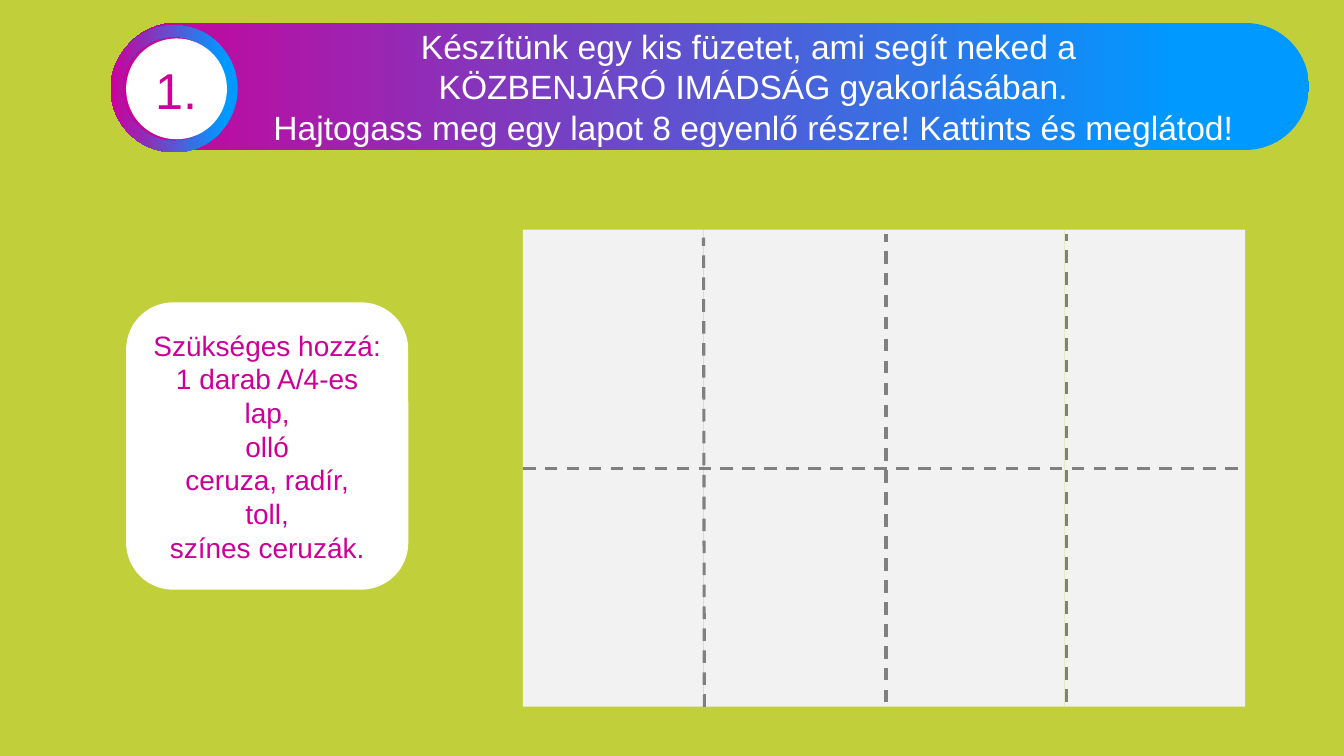
import pptx
import pptx.util
import pptx.dml.color
import pptx.enum.dml
import pptx.enum.shapes
import pptx.enum.text
import pptx.oxml

Cm = pptx.util.Cm
Pt = pptx.util.Pt
SHAPES = pptx.enum.shapes.MSO_SHAPE

COLORS = {
    "background": "C0CF3A",
    "blue": "0099FF",
    "magenta": "CC0099",
    "white": "FFFFFF",
    "paper": "F2F2F2",
    "fold": "808080",
}
FONT = "Arial"

STEP_NUMBER = ["1. "]
TITLE_LINES = [
    "Készítünk egy kis füzetet, ami segít neked a ",
    "KÖZBENJÁRÓ IMÁDSÁG gyakorlásában.",
    "Hajtogass meg egy lapot 8 egyenlő részre! Kattints és meglátod!",
]
SUPPLIES = [
    "Szükséges hozzá:",
    "1 darab A/4-es lap,",
    "olló",
    "ceruza, radír,",
    "toll,",
    "színes ceruzák.",
]

# Lengths in centimetres: left, top, width, height
BANNER = (2.84, 0.58, 30.15, 3.2)
RING = (2.79, 0.64, 3.2, 3.2)
NUMBER_DISC = (3.18, 0.97, 2.54, 2.54)
SUPPLIES_PANEL = (3.18, 7.62, 7.11, 7.24)

PAPER_LEFT, PAPER_TOP = 13.18, 5.79
CELL_WIDTH, CELL_HEIGHT = 4.55, 6.01
COLUMNS, ROWS = 4, 2
# Vertical folds: bottom x, bottom y, top x, top y
VERTICAL_FOLDS = [
    (17.75, 17.81, 17.73, 5.99),
    (22.33, 17.7, 22.33, 5.89),
    (26.87, 17.68, 26.87, 5.89),
]


def rgb(name):
    return pptx.dml.color.RGBColor.from_string(COLORS[name])


def add_shape(slide, preset, box, color=None, adjustment=None):
    """Add an outline-free shape; without a colour it gets the blue-magenta gradient."""
    shape = slide.shapes.add_shape(preset, *map(Cm, box))
    shape.shadow.inherit = False
    shape.line.fill.background()
    if adjustment is not None:
        shape.adjustments[0] = adjustment
    if color:
        shape.fill.solid()
        shape.fill.fore_color.rgb = rgb(color)
    else:
        shape.fill.gradient()
        shape.fill.gradient_angle = 180
        stops = shape.fill.gradient_stops
        for stop, position, name in zip(stops, (0.11, 1), ("blue", "magenta")):
            stop.position = position
            stop.color.rgb = rgb(name)
    return shape


def write_lines(shape, lines, size, color):
    frame = shape.text_frame
    frame.word_wrap = True
    frame.vertical_anchor = pptx.enum.text.MSO_ANCHOR.MIDDLE
    for index, line in enumerate(lines):
        paragraph = frame.add_paragraph() if index else frame.paragraphs[0]
        paragraph.alignment = pptx.enum.text.PP_ALIGN.CENTER
        run = paragraph.add_run()
        run.text = line
        run.font.size = Pt(size)
        run.font.name = FONT
        run.font.color.rgb = rgb(color)


def add_fold(slide, ends):
    fold = slide.shapes.add_connector(
        pptx.enum.shapes.MSO_CONNECTOR.STRAIGHT, *map(Cm, ends))
    fold.line.color.rgb = rgb("fold")
    fold.line.width = Pt(2.25)
    fold.line.dash_style = pptx.enum.dml.MSO_LINE.DASH
    properties = fold._element.spPr
    properties.append(pptx.oxml.parse_xml(
        '<a:effectLst xmlns:a="http://schemas.openxmlformats.org/drawingml/2006/main"/>'))


def add_header(slide):
    banner = add_shape(slide, SHAPES.ROUNDED_RECTANGLE, BANNER, adjustment=0.5)
    banner.text_frame.margin_left = Cm(2.39)
    write_lines(banner, TITLE_LINES, 24, "white")
    add_shape(slide, SHAPES.DONUT, RING, adjustment=0.089)
    disc = add_shape(slide, SHAPES.OVAL, NUMBER_DISC, "white")
    write_lines(disc, STEP_NUMBER, 36, "magenta")


def add_folded_paper(slide):
    for row in range(ROWS):
        for column in range(COLUMNS):
            cell = (PAPER_LEFT + column * CELL_WIDTH,
                    PAPER_TOP + row * CELL_HEIGHT, CELL_WIDTH, CELL_HEIGHT)
            add_shape(slide, SHAPES.RECTANGLE, cell, "paper")
    middle = PAPER_TOP + CELL_HEIGHT
    right = PAPER_LEFT + COLUMNS * CELL_WIDTH
    for ends in [(PAPER_LEFT, middle, right, middle), *VERTICAL_FOLDS]:
        add_fold(slide, ends)


def main():
    presentation = pptx.Presentation()
    presentation.slide_width = Cm(33.87)
    presentation.slide_height = Cm(19.05)
    slide = presentation.slides.add_slide(presentation.slide_layouts[6])
    slide.background.fill.solid()
    slide.background.fill.fore_color.rgb = rgb("background")

    add_header(slide)
    add_folded_paper(slide)
    panel = add_shape(slide, SHAPES.ROUNDED_RECTANGLE, SUPPLIES_PANEL, "white")
    write_lines(panel, SUPPLIES, 20, "magenta")
    presentation.save("out.pptx")


if __name__ == "__main__":
    main()
